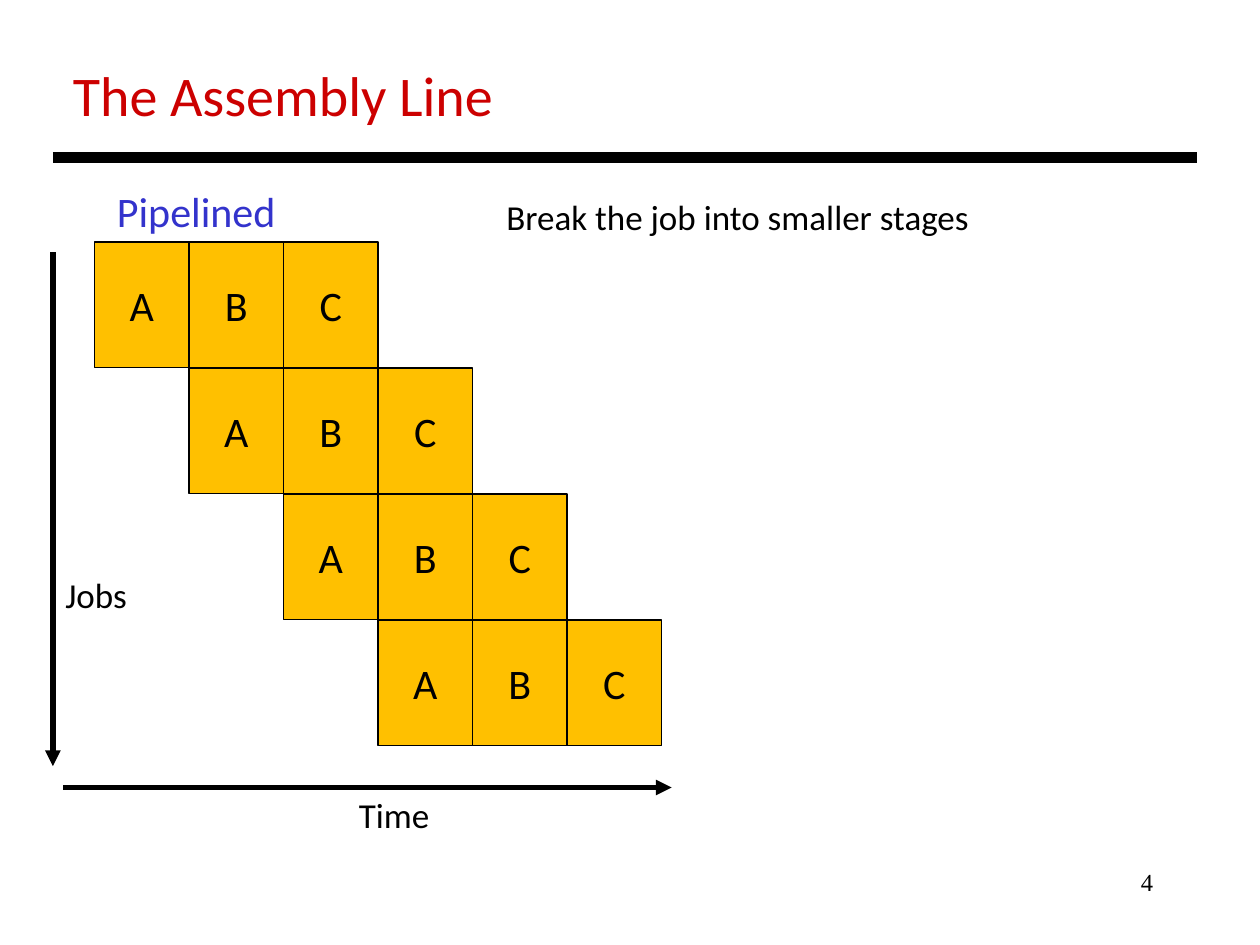
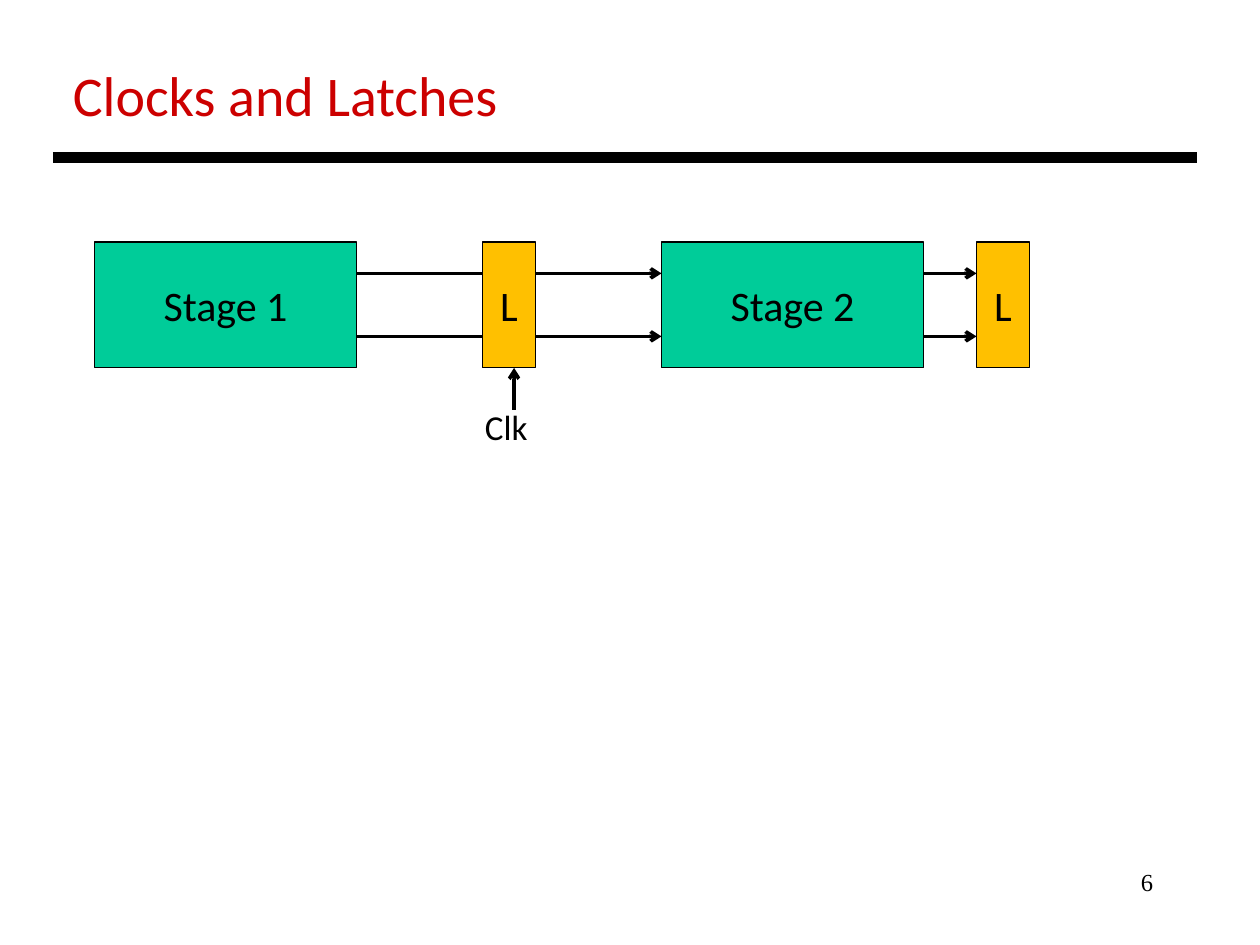
import pptx
import pptx.util
import pptx.dml.color
import pptx.enum.shapes
import pptx.enum.text
import pptx.oxml.ns
from lxml import etree
from pptx.util import Inches

BLACK = "000000"
TITLE_RED = "CC0000"
HEADING_BLUE = "3333CC"
AMBER = "FFC000"
STAGE_GREEN = "00CC99"

BODY_FONT = "Calibri"
NUMBER_FONT = "Times New Roman"

ROW_TOP = 1.92
BOX_HEIGHT = 1


def rgb(hex_code):
    return pptx.dml.color.RGBColor.from_string(hex_code)


def write_text(shape, text, *, size, color=BLACK, font=BODY_FONT, align="LEFT",
               anchor="TOP", wrap=False, grow=False):
    frame = shape.text_frame
    frame.word_wrap = wrap
    frame.vertical_anchor = getattr(pptx.enum.text.MSO_ANCHOR, anchor)
    if grow:
        frame.auto_size = pptx.enum.text.MSO_AUTO_SIZE.SHAPE_TO_FIT_TEXT
    paragraph = frame.paragraphs[0]
    paragraph.alignment = getattr(pptx.enum.text.PP_ALIGN, align)
    run = paragraph.add_run()
    run.text = text
    run.font.size = pptx.util.Pt(size)
    run.font.name = font
    run.font.color.rgb = rgb(color)


def add_label(slide, text, left, top, width, height=0.44, *, size=20, grow=True,
              **text_format):
    label = slide.shapes.add_textbox(
        Inches(left), Inches(top), Inches(width), Inches(height))
    write_text(label, text, size=size, grow=grow, **text_format)


def add_box(slide, text, left, top, width, fill):
    box = slide.shapes.add_shape(
        pptx.enum.shapes.MSO_SHAPE.RECTANGLE,
        Inches(left), Inches(top), Inches(width), Inches(BOX_HEIGHT))
    box.shadow.inherit = False
    box.fill.solid()
    box.fill.fore_color.rgb = rgb(fill)
    box.line.color.rgb = rgb(BLACK)
    box.line.width = pptx.util.Pt(0.75)
    write_text(box, text, size=24, align="CENTER", anchor="MIDDLE")


def add_line(slide, start, end, width, head=None):
    """Draw a straight line from start to end, with an optional arrowhead at end."""
    line = slide.shapes.add_connector(
        pptx.enum.shapes.MSO_CONNECTOR.STRAIGHT,
        *(Inches(value) for value in (*start, *end)))
    line.line.color.rgb = rgb(BLACK)
    line.line.width = pptx.util.Pt(width)
    if head:
        etree.SubElement(line.line._get_or_add_ln(),
                         pptx.oxml.ns.qn("a:tailEnd"), type=head)
    etree.SubElement(line._element.spPr, pptx.oxml.ns.qn("a:effectLst"))


def add_titled_slide(deck, title, title_width, number):
    """Add a blank slide with the shared page number, title and rule."""
    slide = deck.slides.add_slide(deck.slide_layouts[6])
    add_label(slide, number, 7.17, 6.83, 2.08, 0.5, size=14, font=NUMBER_FONT,
              align="RIGHT", wrap=True, grow=False)
    add_label(slide, title, 0.48, 0.43, title_width, 0.64, size=32, color=TITLE_RED)
    add_line(slide, (0.42, 1.25), (9.5, 1.25), 6)
    return slide


def build_assembly_line(deck):
    slide = add_titled_slide(deck, "The Assembly Line", 3.57, "4")
    step_width = 0.75
    for job in range(4):
        for step, letter in enumerate("ABC"):
            add_box(slide, letter, 0.75 + (job + step) * step_width,
                    ROW_TOP + job * BOX_HEIGHT, step_width, AMBER)

    add_line(slide, (0.42, 2), (0.42, 6.08), 3, "triangle")
    add_line(slide, (0.5, 6.25), (5.33, 6.25), 3, "triangle")
    add_label(slide, "Jobs", 0.42, 4.5, 0.69)
    add_label(slide, "Time", 2.75, 6.25, 0.77)
    add_label(slide, "Pipelined", 0.83, 1.42, 1.47, 0.5, size=24, color=HEADING_BLUE)
    add_label(slide, "Break the job into smaller stages", 3.92, 1.5, 3.91)


def build_clocks_and_latches(deck):
    slide = add_titled_slide(deck, "Clocks and Latches", 3.61, "6")
    stage_width = 2.08
    stage_lefts = (0.75, 5.25)
    latch_lefts = (3.83, 7.75)
    signal_ends = (stage_lefts[1], latch_lefts[1])

    for number, (left, end) in enumerate(zip(stage_lefts, signal_ends), 1):
        add_box(slide, f"Stage {number}", left, ROW_TOP, stage_width, STAGE_GREEN)
        for offset in (0.25, 0.75):
            signal_y = ROW_TOP + offset
            add_line(slide, (left + stage_width, signal_y), (end, signal_y), 2, "arrow")

    # The first latch sits on top of the signals between the stages.
    for left in latch_lefts:
        add_box(slide, "L", left, ROW_TOP, 0.42, AMBER)

    add_line(slide, (4.08, 3.25), (4.08, ROW_TOP + BOX_HEIGHT), 2, "arrow")
    add_label(slide, "Clk", 3.75, 3.17, 0.54)


def main():
    deck = pptx.Presentation()
    deck.slide_width = Inches(10)
    deck.slide_height = Inches(7.5)
    build_assembly_line(deck)
    build_clocks_and_latches(deck)
    deck.save("out.pptx")


if __name__ == "__main__":
    main()
